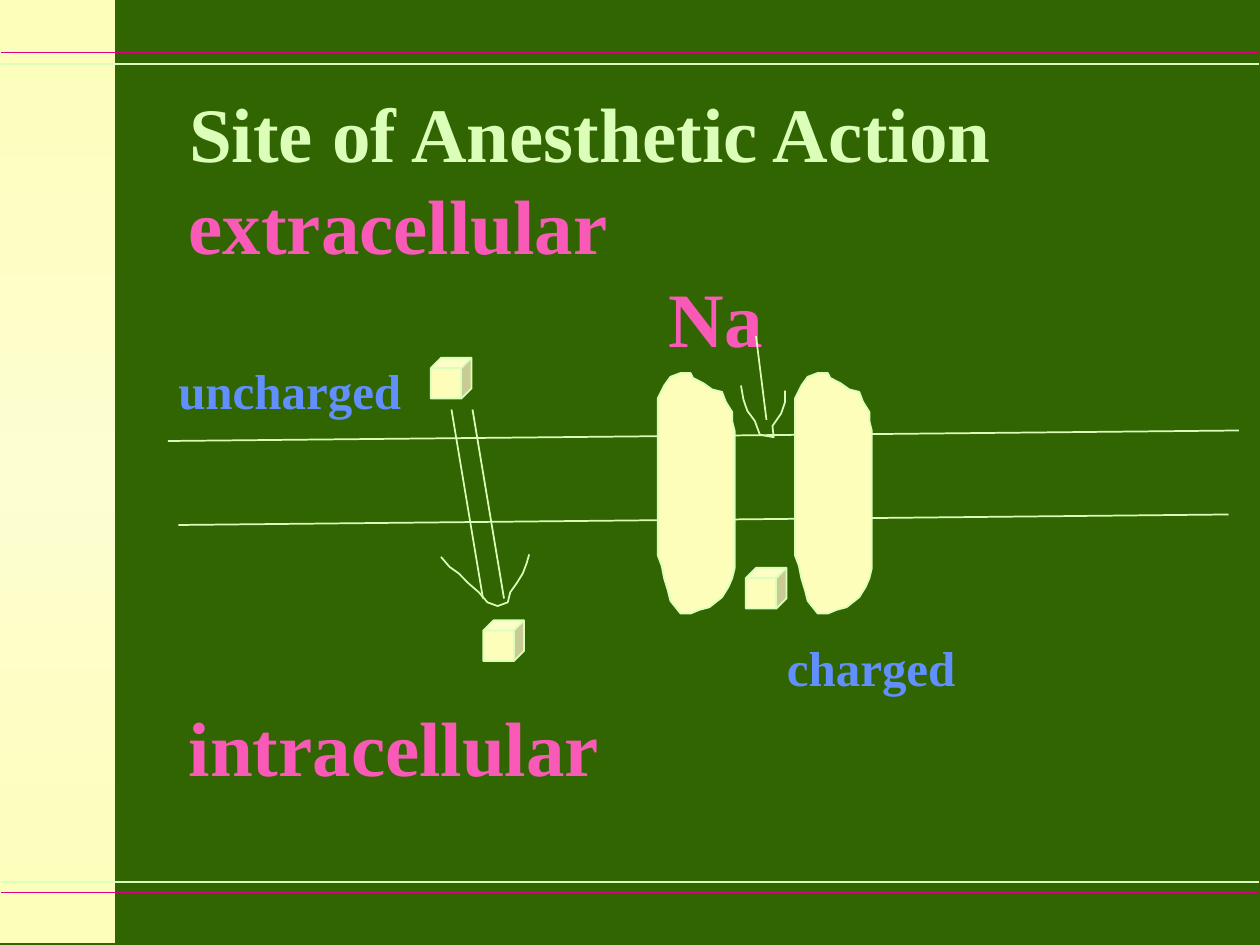
"""Build a slide showing where anesthetics act on the cell membrane."""
from copy import deepcopy

from lxml import etree
from pptx import Presentation
from pptx.dml.color import RGBColor
from pptx.enum.shapes import MSO_CONNECTOR, MSO_SHAPE
from pptx.enum.text import MSO_ANCHOR, MSO_AUTO_SIZE, PP_ALIGN
from pptx.oxml.ns import qn
from pptx.util import Pt

STRAIGHT = MSO_CONNECTOR.STRAIGHT
RECTANGLE, CUBE = MSO_SHAPE.RECTANGLE, MSO_SHAPE.CUBE
TOP, LEFT, NO_FIT = MSO_ANCHOR.TOP, PP_ALIGN.LEFT, MSO_AUTO_SIZE.NONE

GREEN = RGBColor(0x31, 0x65, 0x01)
CREAM = RGBColor(0xFC, 0xFE, 0xB9)
PALE_CREAM = RGBColor(0xFD, 0xFE, 0xD1)
MINT = RGBColor(0xDB, 0xFF, 0xB8)
MAGENTA = RGBColor(0xDC, 0x00, 0x81)
PINK = RGBColor(0xF9, 0x5A, 0xB7)
BLUE = RGBColor(0x61, 0x8F, 0xFD)
FONT = "Times New Roman"

TITLE = "Site of Anesthetic Action"
TITLE_BOX = (100.8, 45.2, 480, 58)
LABELS = [
    ("extracellular", (100.8, 97.8, 255, 58), 44, PINK),
    ("Na", (375, 150.9, 70, 58), 44, PINK),
    ("charged", (442.6, 360.6, 112, 40), 28, BLUE),
    ("intracellular", (100.8, 396.1, 250, 58), 44, PINK),
    ("uncharged", (94.8, 202.3, 142, 40), 28, BLUE),
]
BAND = (0, 0, 66, 539)
RULES = [(36.5, MINT), (30, MAGENTA), (504, MINT), (510, MAGENTA)]
MEMBRANE = [(96, 252, 708, 246), (102, 300, 702, 294)]
ARROW_SHAFTS = [(258, 234, 276, 342), (270, 234, 288, 342), (432, 192, 438, 240)]
CUBE_SIZE = 23.3
CUBES = [(426.2, 324.5), (276.2, 354.5), (246.2, 204.5)]
CHANNEL_LEFTS, CHANNEL_TOP = (375.9, 454.3), 213.1
CHANNEL = [
    (20.2, 2.9), (25.9, 5.8), (31, 9.4), (36.7, 10.8), (38.9, 16.6), (42.5, 22.3),
    (42.5, 27.4), (43.9, 33.1), (43.9, 111.6), (42.5, 117.4), (40.3, 122.4),
    (36.7, 128.2), (29.5, 133.9), (23.8, 135.4), (18.7, 137.5), (13, 137.5),
    (7.2, 130.3), (5.8, 124.6), (3.6, 117.4), (2.2, 110.2), (0, 104.4),
    (0, 14.4), (3.6, 7.2), (7.2, 2.2), (13, 0), (18.7, 0),
]
ARROW_HEADS = [
    [(252, 318.2), (257, 324), (262.1, 327.6), (267.8, 333.4), (273.6, 338.4),
     (278.6, 344.2), (284.4, 346.3), (290.2, 344.2), (291.6, 338.4),
     (295.2, 333.4), (298.8, 327.6), (301, 321.8), (302.4, 316.8)],
    [(423.4, 220.3), (424.8, 228.2), (427, 234.7), (431.3, 240.5), (434.2, 248.4),
     (442.1, 249.8), (441.4, 243.4), (446.4, 236.2), (448.6, 229.7), (448.6, 223.2)],
]


def points(values):
    return [Pt(value) for value in values]


def write_text(shape, text, size, color):
    frame = shape.text_frame
    frame.word_wrap = False
    frame.auto_size = NO_FIT
    frame.vertical_anchor = TOP
    paragraph = frame.paragraphs[0]
    paragraph.alignment = LEFT
    run = paragraph.add_run()
    run.text = text
    run.font.name, run.font.size, run.font.bold = FONT, Pt(size), True
    run.font.color.rgb = color


def style_shape(shape, filled=True):
    shape.shadow.inherit = False
    if filled:
        shape.fill.solid()
        shape.fill.fore_color.rgb = CREAM
    else:
        shape.fill.background()
    shape.line.color.rgb = MINT
    shape.line.width = Pt(1)


def add_line(slide, ends, color=MINT):
    line = slide.shapes.add_connector(STRAIGHT, *points(ends))
    line.line.color.rgb = color
    line.line.width = Pt(1)
    etree.SubElement(line._element.spPr, qn("a:effectLst"))


def add_outline(slide, vertices, closed):
    vertices = [points(vertex) for vertex in vertices]
    builder = slide.shapes.build_freeform(*vertices[0])
    builder.add_line_segments(vertices[1:], close=closed)
    style_shape(builder.convert_to_shape(), filled=closed)


def add_band(slide):
    band = slide.shapes.add_shape(RECTANGLE, *points(BAND))
    band.shadow.inherit = False
    band.line.fill.background()
    band.fill.gradient()
    band.fill.gradient_angle = 90
    first, last = band.fill.gradient_stops
    first.color.rgb = last.color.rgb = CREAM
    stop_list = band._element.spPr.find(".//" + qn("a:gsLst"))
    stop_list.insert(1, deepcopy(stop_list[0]))
    middle = band.fill.gradient_stops[1]
    middle.position, middle.color.rgb = 0.5, PALE_CREAM


def main():
    presentation = Presentation()
    presentation.slide_width, presentation.slide_height = Pt(720), Pt(540)
    slide = presentation.slides.add_slide(presentation.slide_layouts[5])
    slide.background.fill.solid()
    slide.background.fill.fore_color.rgb = GREEN

    add_band(slide)
    for height, color in RULES:
        add_line(slide, (0.5, height, 719.5, height), color)

    title = slide.shapes.title
    title.left, title.top, title.width, title.height = points(TITLE_BOX)
    write_text(title, TITLE, size=44, color=MINT)
    for text, box, size, color in LABELS:
        label = slide.shapes.add_textbox(*points(box))
        write_text(label, text, size=size, color=color)

    for ends in MEMBRANE:
        add_line(slide, ends)
    for left in CHANNEL_LEFTS:
        add_outline(slide, [(left + x, CHANNEL_TOP + y) for x, y in CHANNEL], closed=True)
    for left, top in CUBES:
        cube = slide.shapes.add_shape(CUBE, *points((left, top, CUBE_SIZE, CUBE_SIZE)))
        style_shape(cube)
    for ends in ARROW_SHAFTS:
        add_line(slide, ends)
    for head in ARROW_HEADS:
        add_outline(slide, head, closed=False)

    presentation.save("out.pptx")


if __name__ == "__main__":
    main()
